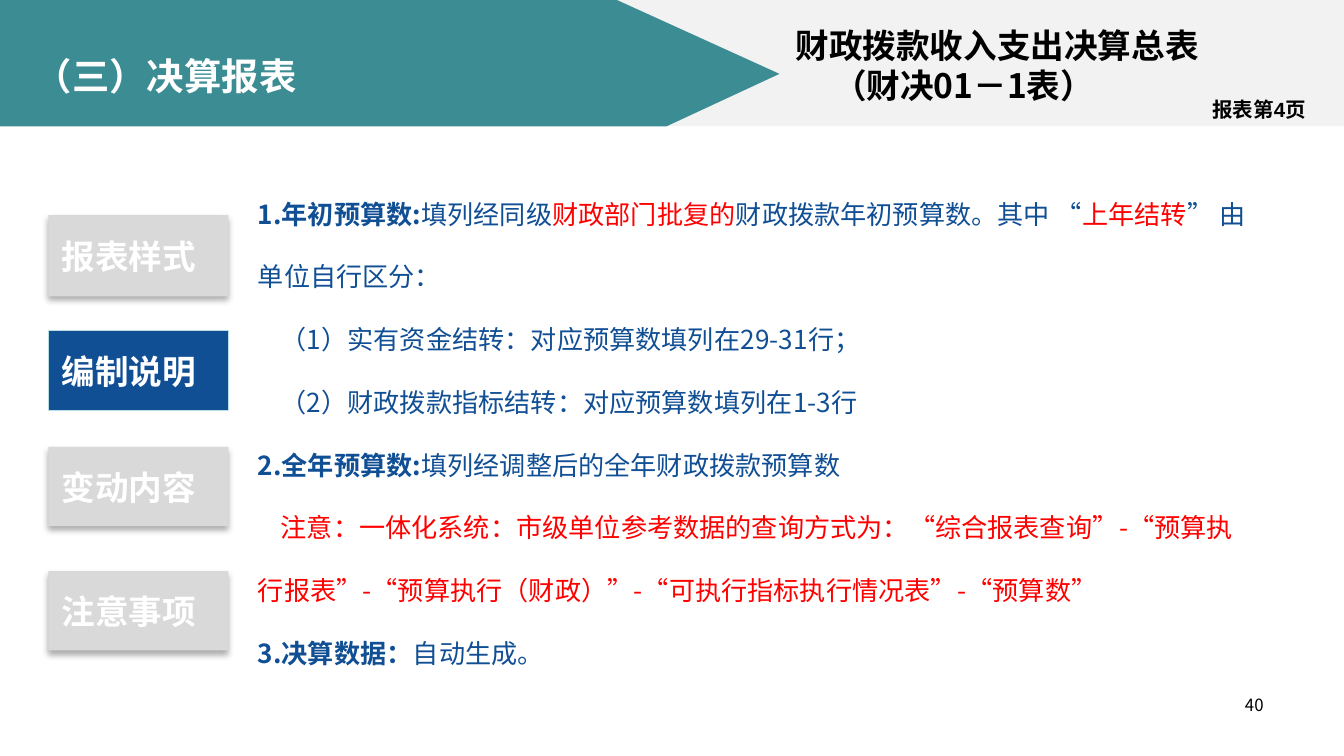
from lxml import etree
from pptx import Presentation
from pptx import util as u
from pptx.dml.color import RGBColor
from pptx.enum import shapes, text
from pptx.oxml.ns import qn

CELL = u.Inches(0.1)
COLS, ROWS = 100, 56.25
FACE = "Noto Sans CJK SC"

WHITE = RGBColor(0xFF, 0xFF, 0xFF)
BLACK = RGBColor(0, 0, 0)
PALE = RGBColor(0xF2, 0xF2, 0xF2)
GREY = RGBColor(0xD9, 0xD9, 0xD9)
TEAL = RGBColor(0x3C, 0x8C, 0x93)
BLUE = RGBColor(0x11, 0x4F, 0x95)
SKY = RGBColor(0xBB, 0xE0, 0xE3)
RED = RGBColor(0xFF, 0, 0)

HEAD = {"size": u.Pt(20), "bold": True}
LABEL = {"size": u.Pt(18), "bold": True}
NOTE = {"size": u.Pt(11), "bold": True, "name": "Arial"}
FOOT = {"size": u.Pt(9)}
PLAIN = {"size": u.Pt(14), "bold": False}
STRONG = {"size": u.Pt(14), "bold": True}

BODY = [
    (0, [("1.年初预算数:", STRONG, BLUE), ("填列经同级", PLAIN, BLUE),
         ("财政部门批复的", PLAIN, RED),
         ("财政拨款年初预算数。其中 “", PLAIN, BLUE),
         ("上年结转", PLAIN, RED), ("” 由单位自行区分：", PLAIN, BLUE)]),
    (1.7, [("（1）实有资金结转：对应预算数填列在29-31行；", PLAIN, BLUE)]),
    (1.7, [("（2）财政拨款指标结转：对应预算数填列在1-3行", PLAIN, BLUE)]),
    (0, [("2.全年预算数:", STRONG, BLUE),
         ("填列经调整后的全年财政拨款预算数", PLAIN, BLUE)]),
    (1.7, [("注意：一体化系统：市级单位参考数据的查询方式为："
            "“综合报表查询”-“预算执行报表”-“预算执行（财政）”-"
            "“可执行指标执行情况表”-“预算数”", PLAIN, RED)]),
    (0, [("3.决算数据：", STRONG, BLUE), ("自动生成。", PLAIN, BLUE)]),
]

TABS = [
    ("报表样式", 16, 6.05, False),
    ("编制说明", 24.6, 5.95, True),
    ("变动内容", 33.25, 5.9, False),
    ("注意事项", 42.5, 5.9, False),
]


def grid(*cells):
    return [round(c * CELL) for c in cells]


def add_run(para, words, form, color):
    run = para.add_run()
    run.text = words
    for key, val in {"name": FACE, **form}.items():
        setattr(run.font, key, val)
    run.font.color.rgb = color
    east = etree.SubElement(run._r.get_or_add_rPr(), qn("a:ea"))
    east.set("typeface", FACE)


def write(shape, paras, anchor=text.MSO_ANCHOR.TOP, **form):
    frame = shape.text_frame
    frame.word_wrap = True
    frame.vertical_anchor = anchor
    for num, (dent, runs) in enumerate(paras):
        para = frame.add_paragraph() if num else frame.paragraphs[0]
        for key, val in {"alignment": text.PP_ALIGN.LEFT, **form}.items():
            setattr(para, key, val)
        if dent:
            para._p.get_or_add_pPr().set("indent", str(grid(dent)[0]))
        for run in runs:
            add_run(para, *run)


def add_text(slide, place, paras, **form):
    write(slide.shapes.add_textbox(*grid(*place)), paras, **form)


def paint(shape, fill, line=None):
    shape.shadow.inherit = False
    shape.fill.solid()
    shape.fill.fore_color.rgb = fill
    if line is None:
        shape.line.fill.background()
    else:
        shape.line.color.rgb = line
        shape.line.width = u.Pt(0.5)


def add_rect(slide, place, fill, line=None):
    rect = slide.shapes.add_shape(shapes.MSO_SHAPE.RECTANGLE, *grid(*place))
    paint(rect, fill, line)
    return rect


def add_shade(shape):
    effect = shape._element.spPr.find(qn("a:effectLst"))
    shade = etree.SubElement(effect, qn("a:outerShdw"), blurRad=str(u.Pt(3.5)),
                             dist=str(u.Pt(2.2)), dir="5400000", algn="t",
                             rotWithShape="0")
    color = etree.SubElement(shade, qn("a:srgbClr"), val=str(BLACK))
    etree.SubElement(color, qn("a:alpha"), val="32000")


def add_arrow(slide):
    start, *rest = [grid(*spot) for spot in
                    [(0, 0), (45.9, 0), (58, 5.5), (49.6, 9.4), (0, 9.4)]]
    path = slide.shapes.build_freeform(*start)
    path.add_line_segments(rest, close=True)
    paint(path.convert_to_shape(), TEAL)


def add_tab(slide, words, top, high, live):
    place = (3.6, top, 13.4, high)
    if live:
        tab = add_rect(slide, place, BLUE, SKY)
    else:
        tab = add_rect(slide, place, GREY)
        add_shade(tab)
    write(tab, [(0, [(words, LABEL, WHITE)])], text.MSO_ANCHOR.MIDDLE)


def main():
    deck = Presentation()
    deck.slide_width, deck.slide_height = grid(COLS, ROWS)
    slide = deck.slides.add_slide(deck.slide_layouts[6])
    mid = text.MSO_ANCHOR.MIDDLE

    add_rect(slide, (19.2, 0, 80.8, 9.4), PALE)
    add_arrow(slide)
    add_text(slide, (1.6, 3.4, 47.1, 4.5),
             [(0, [("（三）决算报表", HEAD, WHITE)])], anchor=mid)
    add_text(slide, (71.7, 51.2, 23.3, 3.9), [(0, [("40", FOOT, BLACK)])],
             alignment=text.PP_ALIGN.RIGHT)
    add_text(slide, (18.2, 11.9, 75.9, 42.7), BODY, line_spacing=2.0)
    add_text(slide, (58.2, 1.3, 40.9, 7.1),
             [(0, [("财政拨款收入支出决算总表", LABEL, BLACK)]),
              (2.8, [("（财决01－1表）", LABEL, BLACK)])], anchor=mid)
    for tab in TABS:
        add_tab(slide, *tab)
    add_text(slide, (89.2, 6.7, 9.5, 2.9), [(0, [("报表第4页", NOTE, BLACK)])])
    deck.save("out.pptx")


if __name__ == "__main__":
    main()
